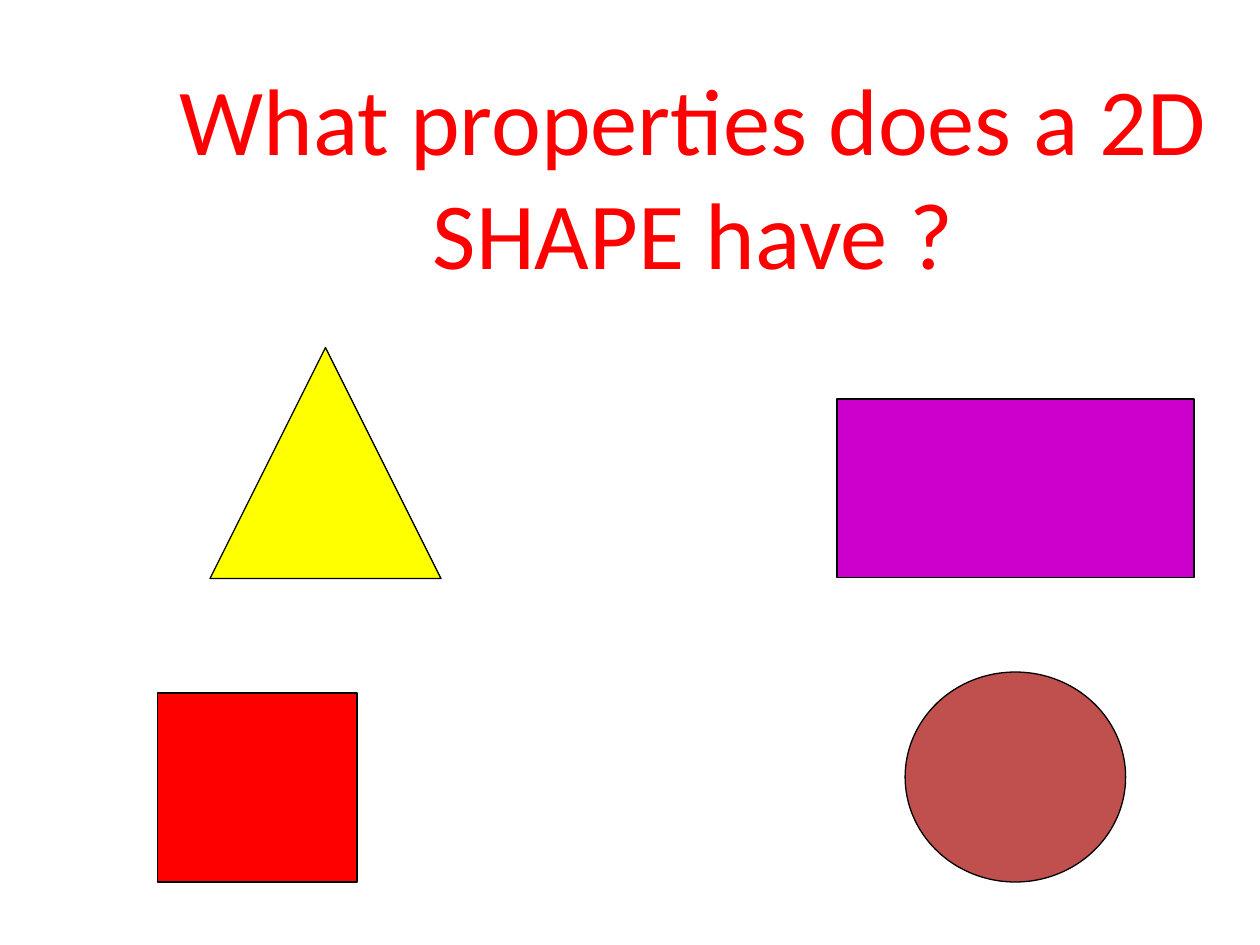
from dataclasses import dataclass

from pptx import Presentation
from pptx.dml.color import RGBColor
from pptx.enum.shapes import MSO_SHAPE
from pptx.enum.text import MSO_ANCHOR, PP_ALIGN
from pptx.slide import Slide
from pptx.util import Inches, Pt

RECTANGLE = MSO_SHAPE.RECTANGLE
ELLIPSE = MSO_SHAPE.OVAL
TRIANGLE = MSO_SHAPE.ISOSCELES_TRIANGLE
MIDDLE = MSO_ANCHOR.MIDDLE
CENTER = PP_ALIGN.CENTER

COLORS = {
    "red": "FF0000",
    "brick": "C0504D",
    "yellow": "FFFF00",
    "purple": "CC00CC",
    "black": "000000",
}
COLUMNS, ROWS = 120, 90
CELL = Inches(10) // COLUMNS


@dataclass(frozen=True)
class Area:
    column: float
    row: float
    columns: float
    rows: float

    def lengths(self) -> list[int]:
        return [round(cells * CELL) for cells in (self.column, self.row, self.columns, self.rows)]


@dataclass(frozen=True)
class Figure:
    kind: MSO_SHAPE
    area: Area
    color: str
    rotation: float = 0


TITLE = "What properties does a 2D SHAPE have ?"
TITLE_AREA = Area(15, 7, 102, 19.3)
FIGURES = [
    Figure(RECTANGLE, Area(15, 66, 19, 18), "red"),
    Figure(ELLIPSE, Area(86.2, 64, 21, 20), "brick"),
    Figure(TRIANGLE, Area(20, 33.1, 22, 22), "yellow"),
    Figure(RECTANGLE, Area(88.2, 29.5, 17, 34), "purple", 90),
]


def rgb(name: str) -> RGBColor:
    return RGBColor.from_string(COLORS[name])


def draw_title(page: Slide, text: str, area: Area) -> None:
    box = page.shapes.add_textbox(*area.lengths())
    frame = box.text_frame
    frame.word_wrap = True
    frame.vertical_anchor = MIDDLE
    frame.text = text
    para = frame.paragraphs[0]
    para.alignment = CENTER
    font = para.runs[0].font
    font.name = "Calibri"
    font.size = Pt(54)
    font.color.rgb = rgb("red")


def draw_figure(page: Slide, figure: Figure) -> None:
    shape = page.shapes.add_shape(figure.kind, *figure.area.lengths())
    shape.rotation = figure.rotation
    shape.shadow.inherit = False
    shape.fill.solid()
    shape.fill.fore_color.rgb = rgb(figure.color)
    shape.line.color.rgb = rgb("black")
    shape.line.width = Pt(0.75)


def main() -> None:
    deck = Presentation()
    deck.slide_width = COLUMNS * CELL
    deck.slide_height = ROWS * CELL
    page = deck.slides.add_slide(deck.slide_layouts[6])
    draw_title(page, TITLE, TITLE_AREA)
    for figure in FIGURES:
        draw_figure(page, figure)
    deck.save("out.pptx")


if __name__ == "__main__":
    main()
